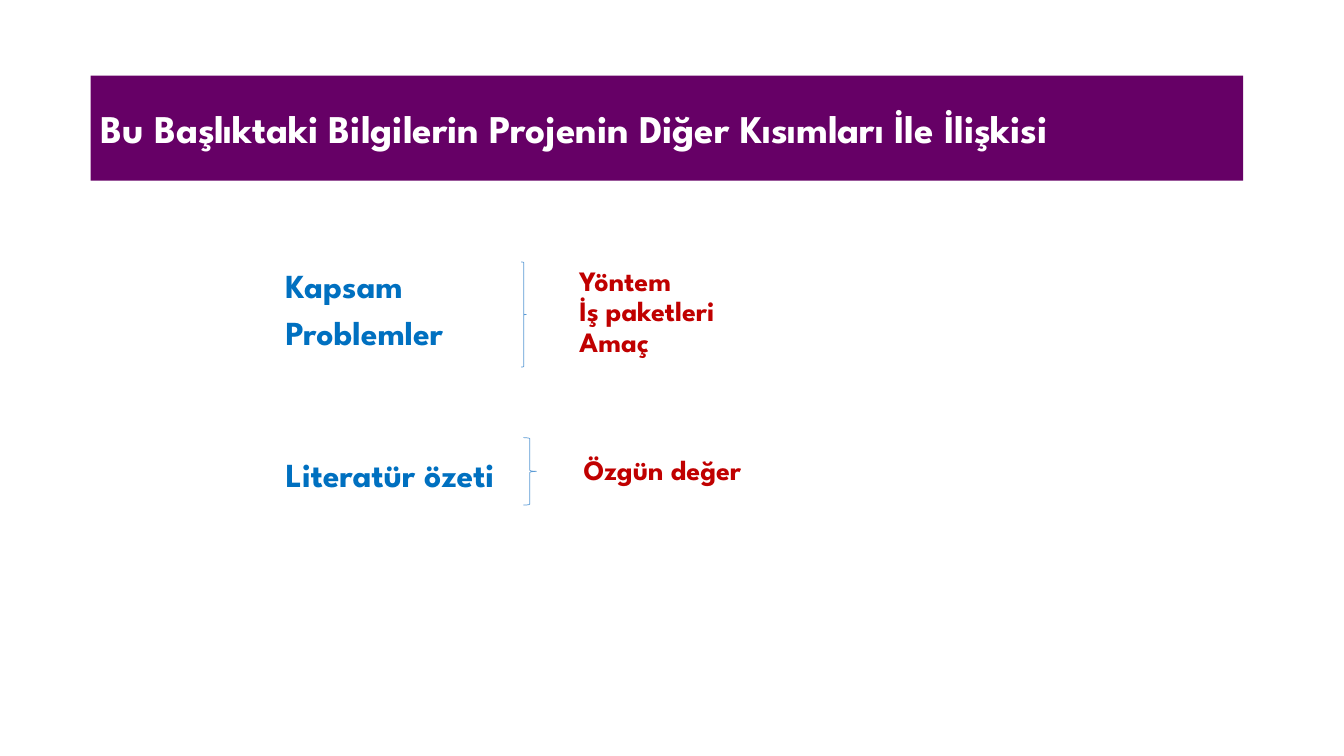
from pptx import Presentation
from pptx.dml.color import RGBColor
from pptx.enum.shapes import MSO_SHAPE as Shape
from pptx.enum.text import MSO_ANCHOR as Anchor, MSO_AUTO_SIZE as AutoSize, PP_ALIGN as Align
from pptx.oxml.ns import qn
from pptx.util import Inches, Pt
from lxml import etree

COLORS = {"band": "660066", "title": "FFFFFF", "topic": "0070C0",
          "related": "C00000", "brace": "5B9BD5"}
FONT = "League Spartan"

deck = Presentation()
deck.slide_width, deck.slide_height = Inches(13.33), Inches(7.5)
page = deck.slides.add_slide(deck.slide_layouts[1])

# Grid of 160 columns and 90 rows
COLUMN, ROW = deck.slide_width / 160, deck.slide_height / 90


def cells(left, top, width, height):
    return [round(left * COLUMN), round(top * ROW), round(width * COLUMN), round(height * ROW)]


def write(para, text, size, color):
    para.alignment = Align.LEFT
    span = para.add_run()
    span.text = text
    span.font.name = FONT
    span.font.size = Pt(size)
    span.font.bold = True
    span.font.color.rgb = RGBColor.from_string(COLORS[color])


# Title band
title = page.shapes.title
title.left, title.top, title.width, title.height = cells(10.8, 9, 137.2, 12.5)
title.fill.solid()
title.fill.fore_color.rgb = RGBColor.from_string(COLORS["band"])
title.text_frame.vertical_anchor = Anchor.MIDDLE
title.text_frame.auto_size = AutoSize.NONE
write(title.text_frame.paragraphs[0],
      "Bu Başlıktaki Bilgilerin Projenin Diğer Kısımları İle İlişkisi", 28, "title")

# Topics on the left, spaced to meet their braces
body = page.placeholders[1]
body.left, body.top, body.width, body.height = cells(32.8, 31.5, 65, 52)
frame = body.text_frame
frame.auto_size = AutoSize.NONE
frame.vertical_anchor = Anchor.TOP
topics = [("Kapsam", 0), ("Problemler", 7.5), ("Literatür özeti", 75.5)]
for index, (topic, gap) in enumerate(topics):
    para = frame.add_paragraph() if index else frame.paragraphs[0]
    para.line_spacing = 0.9
    para.space_before = Pt(gap)
    props = para._p.get_or_add_pPr()
    props.set("marL", "0")
    props.set("indent", "0")
    etree.SubElement(props, qn("a:buNone"))
    write(para, topic, 24, "topic")

# Braces with the related sections on the right
groups = [
    ((62.04, 31.2, 0.6, 12.5), (67.8, 31, 23, 12.5), ["Yöntem", "İş paketleri", "Amaç"]),
    ((62.3, 52.1, 1.56, 8.04), (68.3, 52, 25.5, 8.2), ["Özgün değer"]),
]
for brace_cells, box_cells, sections in groups:
    brace = page.shapes.add_shape(Shape.RIGHT_BRACE, *cells(*brace_cells))
    brace.shadow.inherit = False
    brace.fill.background()
    brace.line.color.rgb = RGBColor.from_string(COLORS["brace"])
    brace.line.width = Pt(0.5)

    box = page.shapes.add_textbox(*cells(*box_cells))
    box.text_frame.word_wrap = True
    box.text_frame.vertical_anchor = Anchor.MIDDLE
    for index, section in enumerate(sections):
        para = box.text_frame.add_paragraph() if index else box.text_frame.paragraphs[0]
        para.line_spacing = 0.9
        write(para, section, 20, "related")

deck.save("out.pptx")
